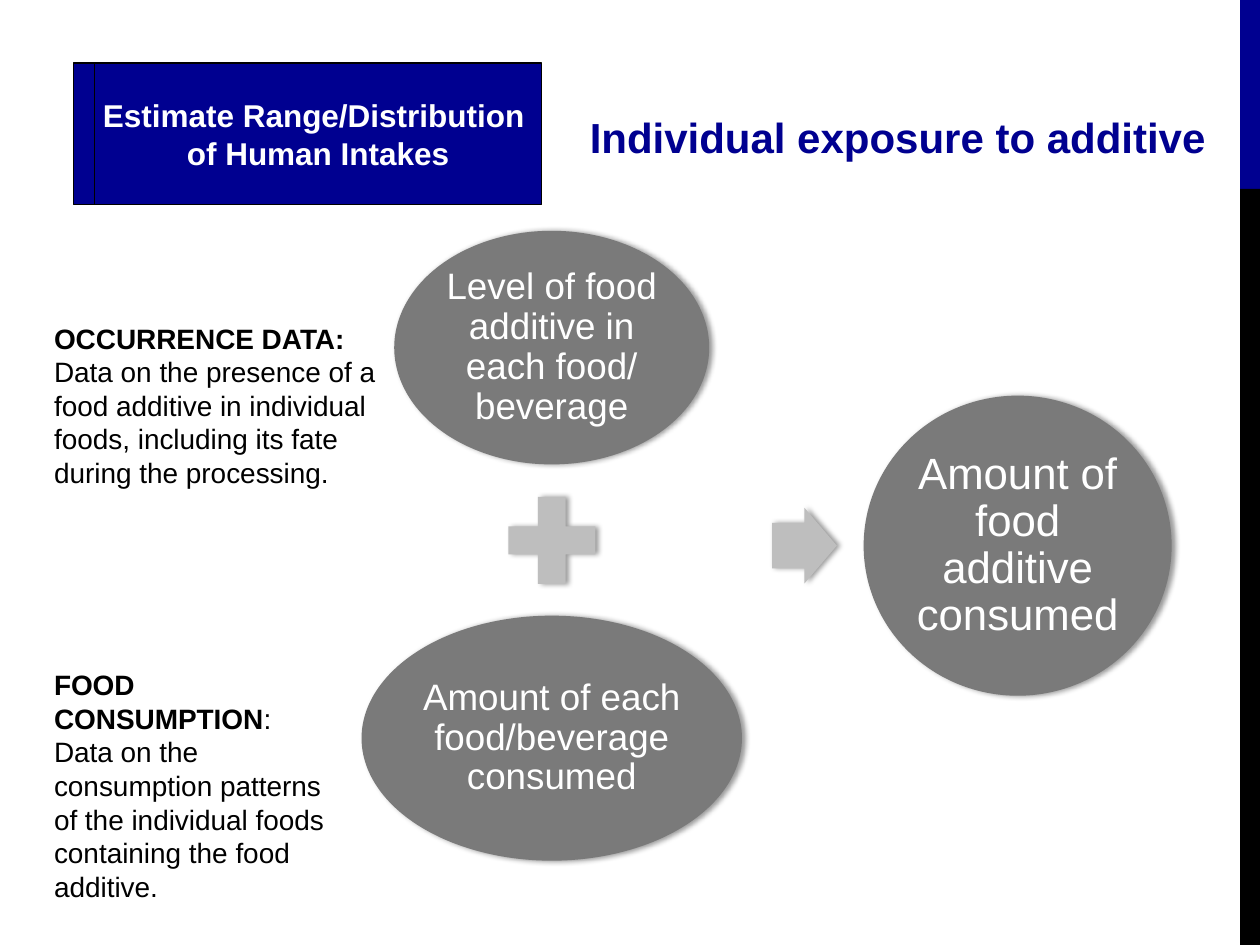
from lxml import etree
from pptx import Presentation
from pptx.dml.color import RGBColor
from pptx.enum.shapes import MSO_SHAPE as Shape
from pptx.enum.text import MSO_ANCHOR as Anchor, MSO_AUTO_SIZE as AutoSize, PP_ALIGN as Align
from pptx.oxml.ns import qn
from pptx.util import Pt

NAVY = RGBColor(0x00, 0x00, 0x90)
BLACK = RGBColor(0x00, 0x00, 0x00)
WHITE = RGBColor(0xFF, 0xFF, 0xFF)
DARK_GRAY = RGBColor(0x7A, 0x7A, 0x7A)
LIGHT_GRAY = RGBColor(0xBE, 0xBE, 0xBE)


def add_filled_shape(kind, bounds, fill, outlined=False, shadowed=False):
    shape = page.shapes.add_shape(kind, *[Pt(length) for length in bounds])
    shape.fill.solid()
    shape.fill.fore_color.rgb = fill
    if outlined:
        shape.line.color.rgb = BLACK
        shape.line.width = Pt(0.75)
    else:
        shape.line.fill.background()
    shape.shadow.inherit = False
    if shadowed:
        effects = shape._element.spPr.find(qn("a:effectLst"))
        shadow = etree.SubElement(effects, qn("a:outerShdw"), blurRad=str(Pt(3.1)),
                                  dist=str(Pt(1.8)), dir="0", rotWithShape="0")
        tint = etree.SubElement(shadow, qn("a:srgbClr"), val=str(BLACK))
        etree.SubElement(tint, qn("a:alpha"), val="40000")
    return shape


def add_span(para, text, size, color, bold=False):
    span = para.add_run()
    span.text = text
    span.font.name = "Arial"
    span.font.size = Pt(size)
    span.font.bold = bold
    span.font.color.rgb = color


deck = Presentation()
deck.slide_width, deck.slide_height = Pt(720), Pt(540)
page = deck.slides.add_slide(deck.slide_layouts[5])

# Side band
add_filled_shape(Shape.RECTANGLE, (708.7, 0, 11.3, 108), NAVY)
add_filled_shape(Shape.RECTANGLE, (708.7, 108, 11.3, 432), BLACK)

# Title
title = page.shapes.title
title.left, title.top, title.width, title.height = Pt(329.8), Pt(60), Pt(370), Pt(36)
title.text_frame.word_wrap = False
title.text_frame.auto_size = AutoSize.NONE
title.text_frame.vertical_anchor = Anchor.MIDDLE
heading = title.text_frame.paragraphs[0]
heading.alignment = Align.LEFT
add_span(heading, "Individual exposure to additive", 24, NAVY, bold=True)

# Two stacked step boxes, the front one labelled
for left in (41.8, 54):
    step_box = add_filled_shape(Shape.RECTANGLE, (left, 36, 255.6, 80.8), NAVY, outlined=True)
step_frame = step_box.text_frame
step_frame.word_wrap = False
step_frame.vertical_anchor = Anchor.MIDDLE
step_frame.add_paragraph()
for para, line in zip(step_frame.paragraphs,
                      ("Estimate Range/Distribution ", "of Human Intakes")):
    para.alignment = Align.CENTER
    add_span(para, line, 18, WHITE, bold=True)

# Equation: level + amount -> total
ELLIPSES = [
    ((225.3, 131.9, 180, 133.5), "Level of food additive in each food/ beverage", 21),
    ((206.6, 351.8, 217.4, 140), "Amount of each food/beverage consumed", 21),
    ((493.5, 226.1, 176, 171.5), "Amount of food additive consumed", 25),
]
for bounds, text, size in ELLIPSES:
    ellipse = add_filled_shape(Shape.OVAL, bounds, DARK_GRAY, shadowed=True)
    frame = ellipse.text_frame
    frame.word_wrap = True
    frame.vertical_anchor = Anchor.MIDDLE
    frame.margin_left = frame.margin_right = frame.margin_top = frame.margin_bottom = Pt(2)
    para = frame.paragraphs[0]
    para.alignment = Align.CENTER
    para.line_spacing = 0.9
    add_span(para, text, size, WHITE)

add_filled_shape(Shape.MATH_PLUS, (281.5, 275, 67.7, 67.7), LIGHT_GRAY, shadowed=True)
arrow = add_filled_shape(Shape.RIGHT_ARROW, (441.2, 290.2, 37, 43.2), LIGHT_GRAY, shadowed=True)
arrow.adjustments[0] = 0.6

# Data descriptions
NOTES = [
    ((23.8, 180, 204, 104.4), "OCCURRENCE DATA: ",
     "Data on the presence of a food additive in individual foods, "
     "including its fate during the processing."),
    ((23.8, 378, 174, 143.3), "FOOD CONSUMPTION",
     ": Data on the consumption patterns of the individual foods "
     "containing the food additive."),
]
for bounds, label, text in NOTES:
    note = page.shapes.add_textbox(*[Pt(length) for length in bounds])
    note.text_frame.word_wrap = True
    para = note.text_frame.paragraphs[0]
    add_span(para, label, 16, BLACK, bold=True)
    add_span(para, text, 16, BLACK)

deck.save("out.pptx")
